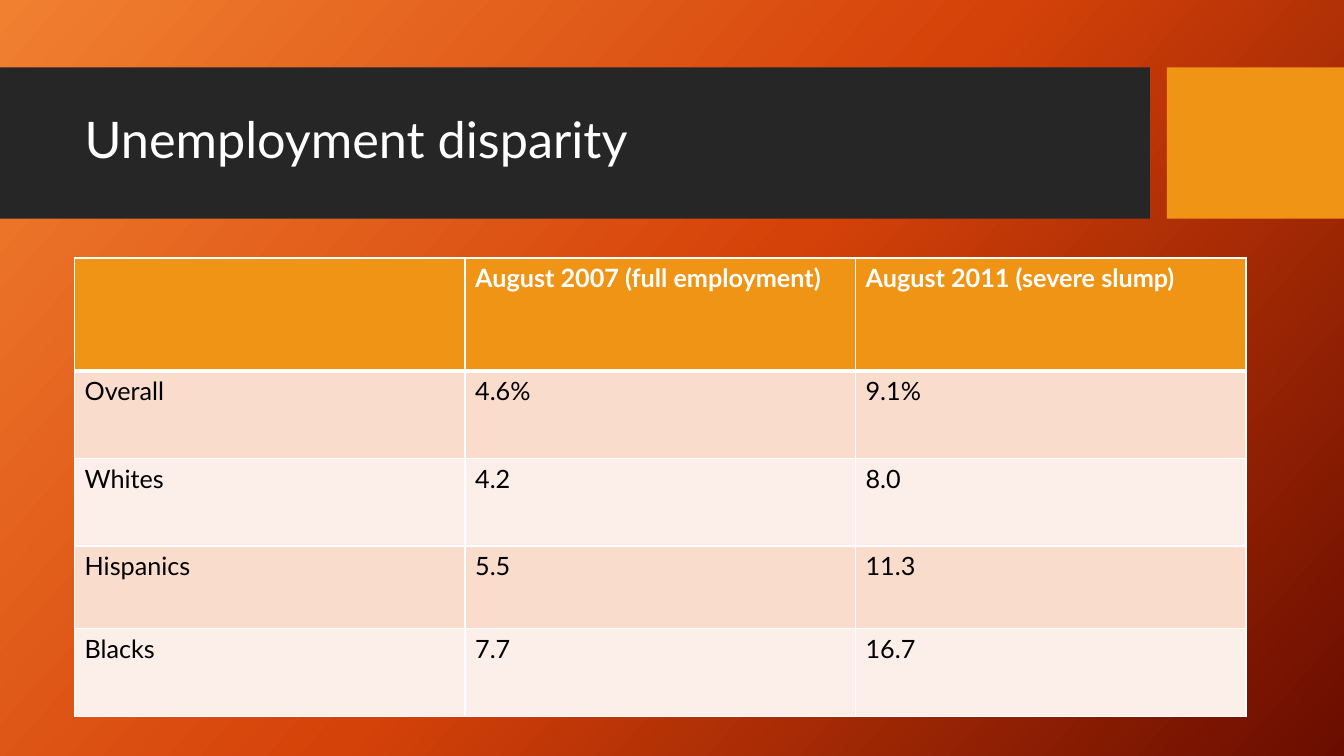
from copy import deepcopy
from dataclasses import dataclass

from lxml.etree import SubElement
from pptx import Presentation
from pptx.dml.color import RGBColor
from pptx.enum.shapes import MSO_SHAPE
from pptx.enum.text import MSO_ANCHOR, MSO_AUTO_SIZE, PP_ALIGN
from pptx.oxml.ns import qn
from pptx.slide import Slide
from pptx.table import Table, _Cell
from pptx.text.text import Font
from pptx.util import Cm, Pt


@dataclass(frozen=True)
class Theme:
    face: str = "Lato"
    title: int = 36
    body: int = 18
    white: str = "FFFFFF"
    black: str = "000000"
    dark: str = "262626"
    amber: str = "F09415"
    bands: tuple[str, str] = ("F9DCCC", "FCEEE8")
    glow: tuple[str, str, str] = ("F18031", "D54209", "6A0D00")
    angle: int = 42
    thin: float = 1
    thick: float = 3


@dataclass(frozen=True)
class Bar:
    left: float
    width: float
    color: str


@dataclass(frozen=True)
class Row:
    height: float
    cells: tuple[str, str, str]


THEME = Theme()
EDGE = 1.88
BAR_TOP, BAR_HIGH = 1.7, 3.81
TABLE_TOP, COL_WIDE = 6.5, 9.84
BARS = (Bar(0, 28.98, THEME.dark), Bar(29.41, 4.46, THEME.amber))
ROWS = (
    Row(2.84, ("", "August 2007 (full employment)", "August 2011 (severe slump)")),
    Row(2.21, ("Overall", "4.6%", "9.1%")),
    Row(2.21, ("Whites", "4.2", "8.0")),
    Row(2.08, ("Hispanics", "5.5", "11.3")),
    Row(2.21, ("Blacks", "7.7", "16.7")),
)


def set_font(font: Font, size: int, color: str, bold: bool = False) -> None:
    font.name = THEME.face
    font.size = Pt(size)
    font.bold = bold
    font.color.rgb = RGBColor.from_string(color)


def paint_back(slide: Slide) -> None:
    fill = slide.background.fill
    fill.gradient()
    fill.gradient_angle = 360 - THEME.angle
    stops = slide.element.xpath(".//p:bg//a:gsLst")[0]
    stops.append(deepcopy(stops[0]))
    last = len(THEME.glow) - 1
    for i, (stop, color) in enumerate(zip(fill.gradient_stops, THEME.glow)):
        stop.position = i / last
        stop.color.rgb = RGBColor.from_string(color)


def add_bar(slide: Slide, bar: Bar) -> None:
    """Draw a band behind the title."""
    shape = slide.shapes.add_shape(
        MSO_SHAPE.RECTANGLE, Cm(bar.left), Cm(BAR_TOP), Cm(bar.width), Cm(BAR_HIGH)
    )
    shape.shadow.inherit = False
    shape.fill.solid()
    shape.fill.fore_color.rgb = RGBColor.from_string(bar.color)
    shape.line.fill.background()
    slide.shapes.title.element.addprevious(shape.element)


def set_title(slide: Slide, text: str) -> None:
    title = slide.shapes.title
    title.left, title.top = Cm(EDGE), Cm(2.08)
    title.width, title.height = Cm(26.7), Cm(3)
    frame = title.text_frame
    frame.text = text
    frame.word_wrap = True
    frame.auto_size = MSO_AUTO_SIZE.NONE
    frame.vertical_anchor = MSO_ANCHOR.MIDDLE
    para = frame.paragraphs[0]
    para.alignment = PP_ALIGN.LEFT
    para.line_spacing = 0.9
    set_font(para.runs[0].font, THEME.title, THEME.white)


def set_edges(cell: _Cell, top: float, bottom: float) -> None:
    props = cell._tc.get_or_add_tcPr()
    sides = {"L": THEME.thin, "R": THEME.thin, "T": top, "B": bottom}
    for side, width in sides.items():
        line = SubElement(props, qn(f"a:ln{side}"), w=str(Pt(width)))
        fill = SubElement(line, qn("a:solidFill"))
        SubElement(fill, qn("a:srgbClr"), val=THEME.white)


def fill_row(table: Table, i: int, row: Row) -> None:
    head = i == 0
    back = THEME.amber if head else THEME.bands[(i - 1) % 2]
    ink = THEME.white if head else THEME.black
    top = THEME.thick if i == 1 else THEME.thin
    bottom = THEME.thick if head else THEME.thin
    table.rows[i].height = Cm(row.height)
    for cell, text in zip(table.rows[i].cells, row.cells):
        set_edges(cell, top, bottom)
        cell.fill.solid()
        cell.fill.fore_color.rgb = RGBColor.from_string(back)
        cell.text_frame.text = text
        for run in cell.text_frame.paragraphs[0].runs:
            set_font(run.font, THEME.body, ink, head)


def add_rates(slide: Slide) -> None:
    cols = len(ROWS[0].cells)
    high = sum(row.height for row in ROWS)
    table = slide.shapes.add_table(
        len(ROWS), cols, Cm(EDGE), Cm(TABLE_TOP), Cm(cols * COL_WIDE), Cm(high)
    ).table
    for col in table.columns:
        col.width = Cm(COL_WIDE)
    for i, row in enumerate(ROWS):
        fill_row(table, i, row)


def main() -> None:
    deck = Presentation()
    deck.slide_width, deck.slide_height = Cm(33.87), Cm(19.05)
    slide = deck.slides.add_slide(deck.slide_layouts.get_by_name("Title Only"))
    paint_back(slide)
    for bar in BARS:
        add_bar(slide, bar)
    set_title(slide, "Unemployment disparity")
    add_rates(slide)
    deck.save("out.pptx")


if __name__ == "__main__":
    main()
